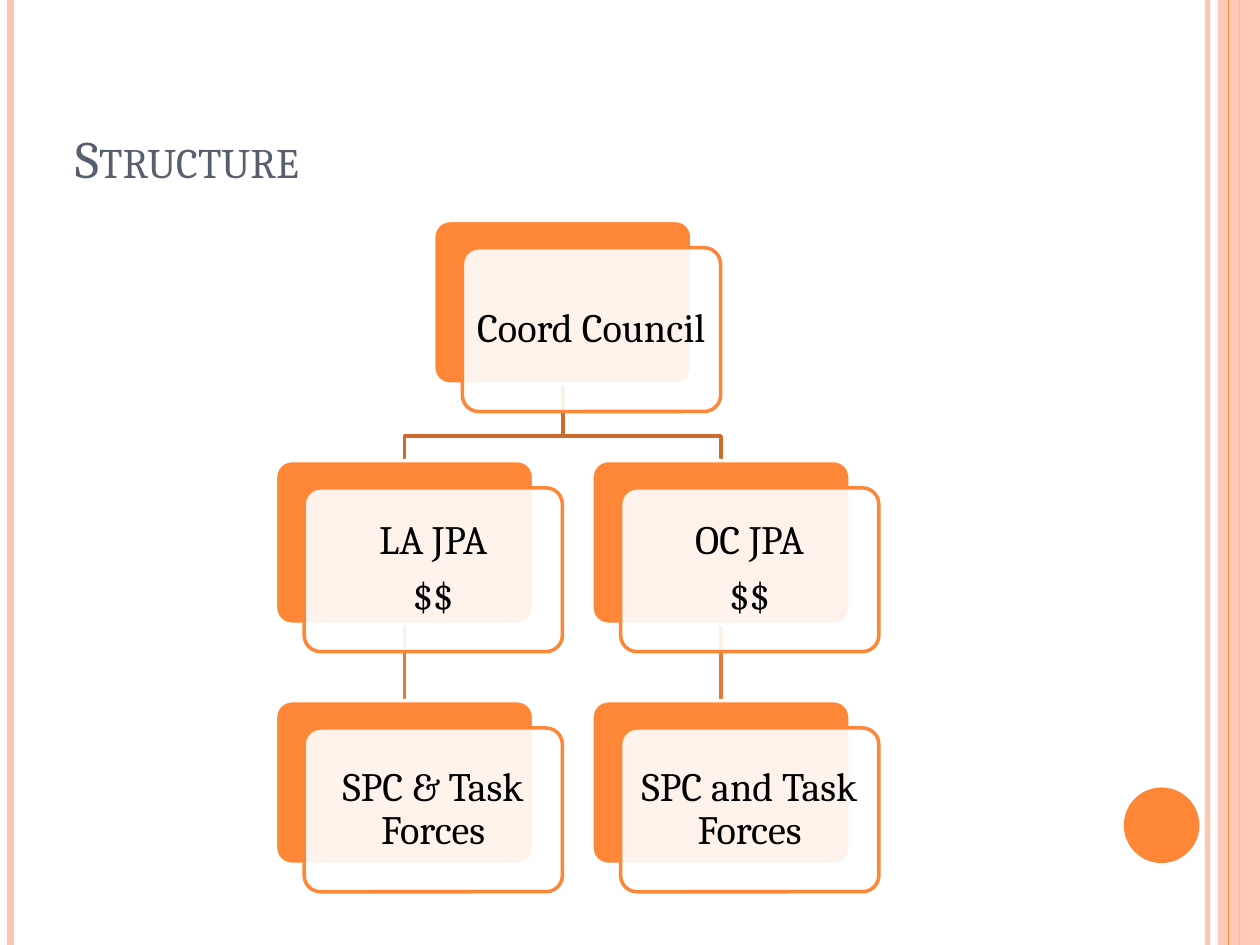
from dataclasses import dataclass

from lxml.etree import SubElement
from pptx import Presentation
from pptx.dml.color import RGBColor
from pptx.enum.shapes import MSO_CONNECTOR, MSO_SHAPE
from pptx.enum.text import MSO_ANCHOR, PP_ALIGN
from pptx.oxml.ns import qn
from pptx.util import Pt


@dataclass(frozen=True)
class Theme:
    font: str = "Cambria"
    title_size: float = 30
    box_size: float = 23
    title: str = "575F6D"
    text: str = "000000"
    white: str = "FFFFFF"
    accent: str = "FE8637"
    pale: str = "FEC3AE"
    upper_link: str = "CB6B2C"
    lower_link: str = "E77A32"


WIDTH, HEIGHT = 720, 540
BOX_WIDTH, BOX_HEIGHT = 147.6, 93.6
CARD_SHIFT_X, CARD_SHIFT_Y = 16.4, 15.6
ROW_TOPS = [126 + 137.2 * row for row in range(3)]
LEFT_X, RIGHT_X = 231.2, 412
MIDDLE_X = (LEFT_X + RIGHT_X) / 2


def apply_format(target, values):
    for name, value in values.items():
        setattr(target, name, value)


def set_color(color_format, color, opacity=100):
    color_format.rgb = RGBColor.from_string(color)
    if opacity < 100:
        element = color_format._xFill.find(qn("a:srgbClr"))
        SubElement(element, qn("a:alpha")).set("val", str(opacity * 1000))


class SlideBuilder:
    def __init__(self, slide, theme):
        self.slide = slide
        self.theme = theme

    def outline(self, shape, color, weight, opacity=100):
        shape.line.width = Pt(weight)
        shape.line.fill.solid()
        set_color(shape.line.fill.fore_color, color, opacity)

    def vertical_rule(self, x, color, weight, opacity=100):
        rule = self.slide.shapes.add_connector(
            MSO_CONNECTOR.STRAIGHT, Pt(x), Pt(0), Pt(x), Pt(HEIGHT))
        self.outline(rule, color, weight, opacity)
        SubElement(rule._element.spPr, qn("a:effectLst"))

    def shape(self, kind, left, top, width, height, fill, opacity=100, line=None):
        shape = self.slide.shapes.add_shape(
            kind, Pt(left), Pt(top), Pt(width), Pt(height))
        shape.shadow.inherit = False
        shape.fill.solid()
        set_color(shape.fill.fore_color, fill, opacity)
        if line:
            self.outline(shape, line, 2)
        else:
            shape.line.fill.background()
        return shape

    def link(self, points, color):
        start, *others = [(Pt(x), Pt(y)) for x, y in points]
        builder = self.slide.shapes.build_freeform(*start)
        builder.add_line_segments(others, close=False)
        shape = builder.convert_to_shape()
        shape.shadow.inherit = False
        shape.fill.background()
        self.outline(shape, color, 2)

    def set_text(self, frame, lines, size, color, frame_format, paragraph_format):
        apply_format(frame, {"word_wrap": True, **frame_format})
        frame.text = "\n".join(lines)
        for paragraph in frame.paragraphs:
            apply_format(paragraph, paragraph_format)
            font = paragraph.runs[0].font
            apply_format(font, {"name": self.theme.font, "size": Pt(size)})
            set_color(font.color, color)

    def title(self, text):
        box = self.slide.shapes.add_textbox(Pt(36), Pt(21.6), Pt(588), Pt(90))
        frame = box.text_frame
        self.set_text(frame, [text], self.theme.title_size, self.theme.title,
                      {"vertical_anchor": MSO_ANCHOR.BOTTOM}, {})
        frame.paragraphs[0].runs[0].font._element.set("cap", "small")

    def node(self, center_x, top, lines):
        """Draw a solid box with a translucent, labelled card over it."""
        theme = self.theme
        left = center_x - BOX_WIDTH / 2
        back = self.shape(MSO_SHAPE.ROUNDED_RECTANGLE, left, top,
                          BOX_WIDTH, BOX_HEIGHT, theme.accent, line=theme.white)
        card = self.shape(MSO_SHAPE.ROUNDED_RECTANGLE,
                          left + CARD_SHIFT_X, top + CARD_SHIFT_Y,
                          BOX_WIDTH, BOX_HEIGHT, theme.white, 90, theme.accent)
        for shape in (back, card):
            shape.adjustments[0] = 0.1
        sides = ("left", "right", "top", "bottom")
        self.set_text(card.text_frame, lines, theme.box_size, theme.text,
                      {"vertical_anchor": MSO_ANCHOR.MIDDLE,
                       **{f"margin_{side}": Pt(4.4) for side in sides}},
                      {"alignment": PP_ALIGN.CENTER, "line_spacing": 0.9,
                       "space_after": Pt(8)})


def main():
    presentation = Presentation()
    apply_format(presentation, {"slide_width": Pt(WIDTH), "slide_height": Pt(HEIGHT)})
    theme = Theme()
    slide = presentation.slides.add_slide(presentation.slide_layouts[6])
    builder = SlideBuilder(slide, theme)

    builder.vertical_rule(690, theme.pale, 3, 93)
    builder.vertical_rule(6, theme.pale, 4.5)
    builder.vertical_rule(708, theme.accent, 1.5)
    builder.shape(MSO_SHAPE.RECTANGLE, 696, 0, 24, HEIGHT, theme.pale, 87)
    builder.vertical_rule(702, theme.accent, 0.75)
    builder.shape(MSO_SHAPE.OVAL, 642.2, 450, 43.2, 43.2, theme.accent)
    builder.title("Structure")

    first, second, third = ROW_TOPS
    first_bottom, second_bottom = first + BOX_HEIGHT, second + BOX_HEIGHT
    fork_y = 249.2
    for x in (RIGHT_X, LEFT_X):
        builder.link([(x, second_bottom), (x, third)], theme.lower_link)
        builder.link([(MIDDLE_X, first_bottom), (MIDDLE_X, fork_y),
                      (x, fork_y), (x, second)], theme.upper_link)

    builder.node(MIDDLE_X, first, ["Coord Council"])
    branches = [
        (LEFT_X, "LA JPA", "SPC & Task Forces"),
        (RIGHT_X, "OC JPA", "SPC and Task Forces"),
    ]
    for x, agency, forces in branches:
        builder.node(x, second, [agency, "$$"])
        builder.node(x, third, [forces])

    presentation.save("out.pptx")


if __name__ == "__main__":
    main()
